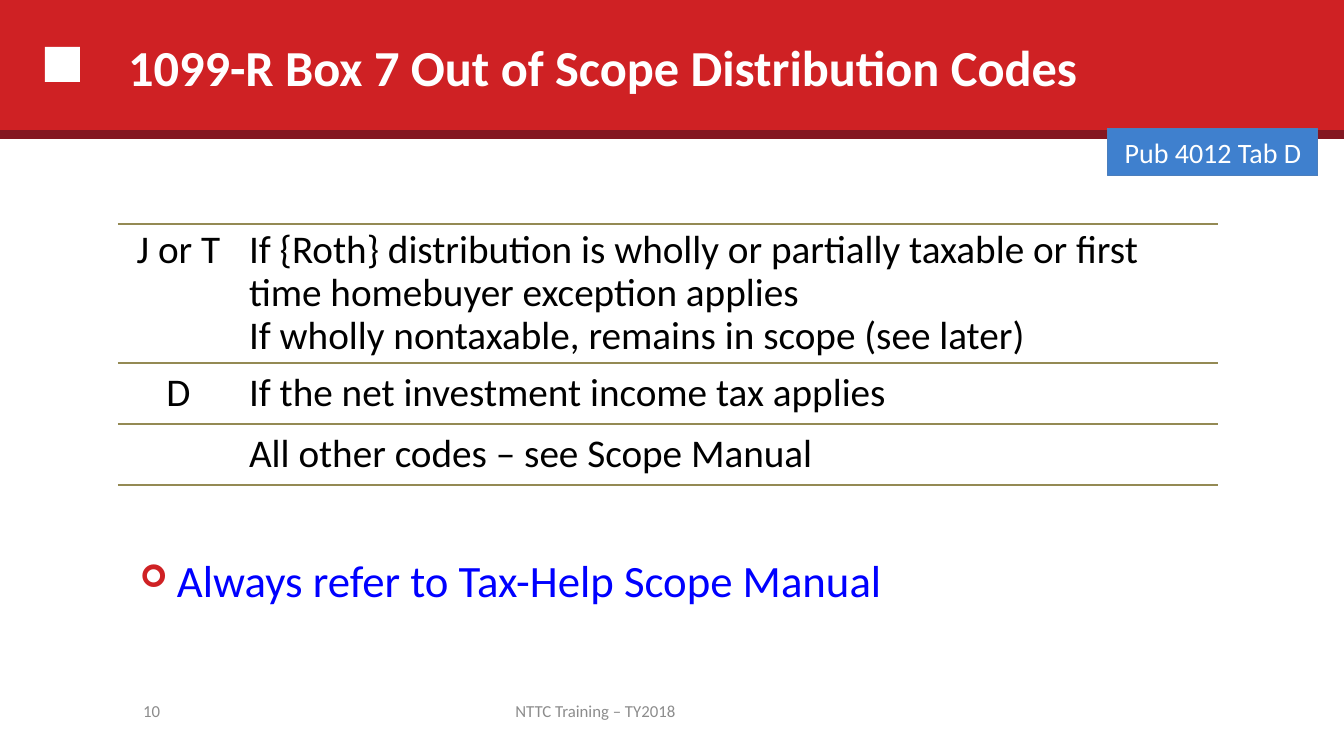
from lxml.etree import SubElement
from pptx import Presentation
from pptx.dml.color import RGBColor
from pptx.enum.shapes import MSO_SHAPE
from pptx.enum.text import MSO_ANCHOR, MSO_AUTO_SIZE, PP_ALIGN
from pptx.oxml import parse_xml
from pptx.oxml.ns import nsdecls, qn
from pptx.util import Pt

PX = 9071.43  # EMU in one px
WIDE, HIGH = 1344, 756

RED = RGBColor(0xCF, 0x21, 0x24)
DARK = RGBColor(0x84, 0x17, 0x21)
WHITE = RGBColor(0xFF, 0xFF, 0xFF)
BLACK = RGBColor(0x00, 0x00, 0x00)
GRAY = RGBColor(0x8C, 0x8C, 0x8C)
LINK = RGBColor(0x00, 0x00, 0xFF)
BLUE = RGBColor(0x3F, 0x80, 0xCE)
EDGE = RGBColor(0x4B, 0x7E, 0xBC)
OLIVE = RGBColor(0x94, 0x8A, 0x54)

LEFT, MID, RIGHT = PP_ALIGN.LEFT, PP_ALIGN.CENTER, PP_ALIGN.RIGHT

FONTS = {
    "title": {"size": Pt(36), "bold": True, "color": WHITE},
    "note": {"size": Pt(32), "color": LINK},
    "cell": {"size": Pt(28), "color": BLACK},
    "tag": {"size": Pt(20), "color": WHITE},
    "foot": {"size": Pt(12), "color": GRAY},
}

CODES = [
    ("J or T", ["If {Roth} distribution is wholly or partially taxable or first "
                "time homebuyer exception applies",
                "If wholly nontaxable, remains in scope (see later)"]),
    ("D", ["If the net investment income tax applies"]),
    ("", ["All other codes – see Scope Manual"]),
]


def emu(*sizes):
    return [round(size * PX) for size in sizes]


def style(par, kind, align=LEFT):
    par.alignment = align
    par.font.name = "Calibri"
    for key, value in FONTS[kind].items():
        if key == "color":
            par.font.color.rgb = value
        else:
            setattr(par.font, key, value)


def write(frame, lines, kind, align=LEFT, anchor=MSO_ANCHOR.MIDDLE):
    frame.word_wrap = True
    frame.vertical_anchor = anchor
    frame.text = "\n".join(lines)
    for par in frame.paragraphs:
        style(par, kind, align)


def block(slide, box, fill, edge=None):
    shape = slide.shapes.add_shape(MSO_SHAPE.RECTANGLE, *emu(*box))
    shape.shadow.inherit = False
    shape.fill.solid()
    shape.fill.fore_color.rgb = fill
    if edge is None:
        shape.line.fill.background()
    else:
        shape.line.color.rgb = edge
        shape.line.width = Pt(0.75)
    return shape


def label(slide, box, text, kind, **place):
    frame = slide.shapes.add_textbox(*emu(*box)).text_frame
    write(frame, [text], kind, **place)
    return frame


def banner(slide, box, text):
    left, top, width, height = box
    block(slide, (left, top, width, height - 9), RED)
    block(slide, (left + 45, top + 47, 35, 35), WHITE)
    block(slide, (left, top + height - 9, width, 9), DARK)
    title = slide.shapes.title
    place = emu(left + 118, top + 3, 1075, height - 13)
    for key, value in zip(("left", "top", "width", "height"), place):
        setattr(title, key, value)
    write(title.text_frame, [text], "title")
    title.text_frame.auto_size = MSO_AUTO_SIZE.NONE
    # The title stands in front of the band
    slide.shapes._spTree.append(title._element)


def rule(cell):
    """Draw lines above and below the cell, none at its sides."""
    cell.fill.background()
    props = cell._tc.get_or_add_tcPr()
    for spot, side in enumerate("LRTB"):
        paint = (f'<a:solidFill><a:srgbClr val="{OLIVE}"/></a:solidFill>'
                 if side in "TB" else "<a:noFill/>")
        props.insert(spot, parse_xml(
            f'<a:ln{side} {nsdecls("a")} w="{Pt(1)}">{paint}</a:ln{side}>'))


def grid(slide, box, rows, cols, heights):
    table = slide.shapes.add_table(len(rows), len(cols), *emu(*box)).table
    table.first_row = table.horz_banding = False
    for col, width in zip(table.columns, emu(*cols)):
        col.width = width
    for row, height, (code, lines) in zip(table.rows, emu(*heights), rows):
        row.height = height
        name, text = row.cells
        write(name.text_frame, [code], "cell", MID)
        write(text.text_frame, lines, "cell")
        for cell in (name, text):
            cell.vertical_anchor = MSO_ANCHOR.MIDDLE
            rule(cell)
            for par in cell.text_frame.paragraphs:
                par.line_spacing = 0.9
    table.cell(0, 0).vertical_anchor = MSO_ANCHOR.TOP


def note(slide, box, text):
    frame = label(slide, box, text, "note", anchor=MSO_ANCHOR.TOP)
    par = frame.paragraphs[0]
    props = par._p.get_or_add_pPr()
    (indent,) = emu(37)
    props.set("marL", str(indent))
    props.set("indent", str(-indent))
    for old in list(props):
        props.remove(old)
    tint = SubElement(props, qn("a:buClr"))
    SubElement(tint, qn("a:srgbClr"), val=str(RED))
    SubElement(props, qn("a:buSzPct"), val="70000")
    SubElement(props, qn("a:buFont"), typeface="Wingdings")
    SubElement(props, qn("a:buChar"), char="➢")
    style(par, "note")


def footer(slide, box, number, text):
    left, top, width, height = box
    label(slide, (left, top, 103, height), number, "foot", align=RIGHT)
    label(slide, (left + width - 425, top, 425, height), text, "foot", align=MID)


def main():
    deck = Presentation()
    deck.slide_width, deck.slide_height = emu(WIDE, HIGH)
    slide = deck.slides.add_slide(deck.slide_layouts[5])
    banner(slide, (0, 0, WIDE, 139),
           "1099-R Box 7 Out of Scope Distribution Codes")
    footer(slide, (67, 691, 741, 40), "10", "NTTC Training – TY2018")
    note(slide, (130, 548, 1076, 77), "Always refer to Tax-Help Scope Manual")
    grid(slide, (118, 224, 1100, 261), CODES, (121, 979), (139, 61, 61))
    tag = block(slide, (1108, 129, 210, 47), BLUE, EDGE)
    write(tag.text_frame, ["Pub 4012 Tab D"], "tag", MID)
    deck.save("out.pptx")


if __name__ == "__main__":
    main()
